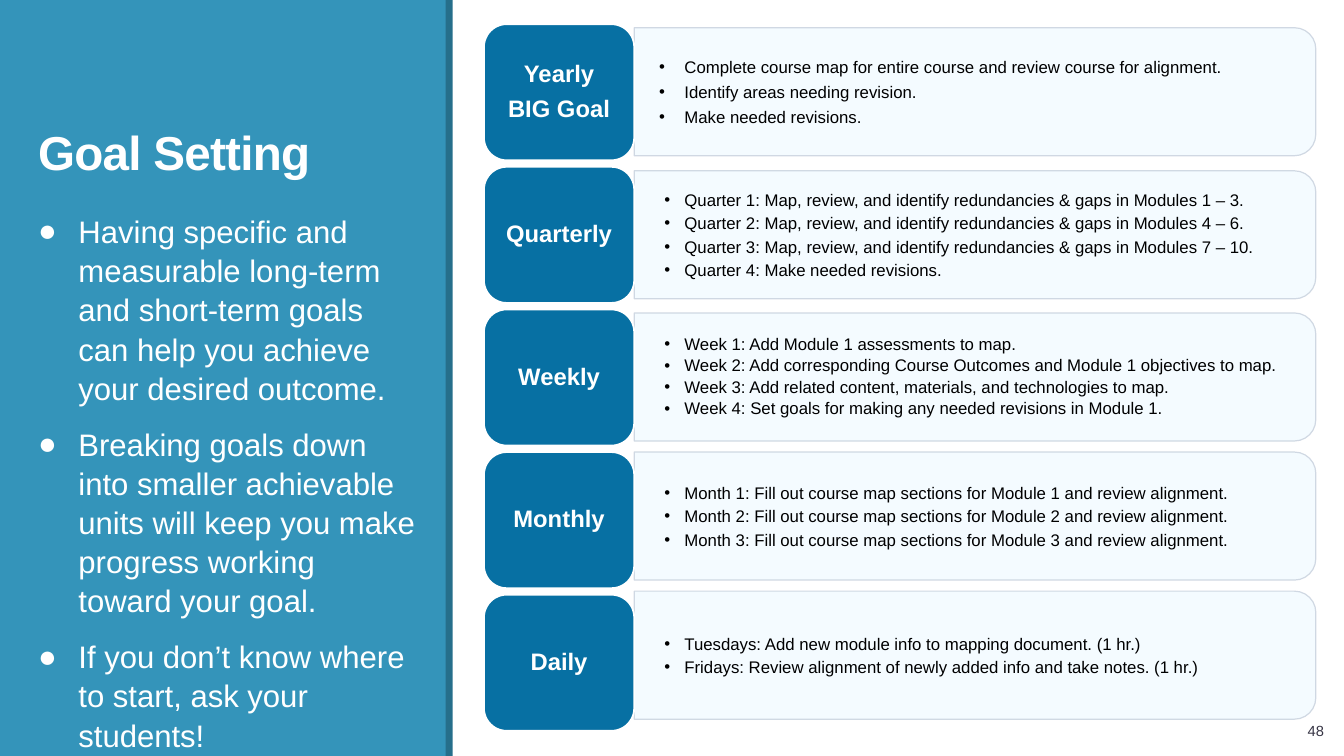
from dataclasses import dataclass

from lxml import etree
from pptx import Presentation
from pptx import util as u
from pptx.dml.color import RGBColor
from pptx.enum import shapes, text
from pptx.oxml.ns import qn

COLORS = {
    "sidebar": "3494BA", "sidebar_edge": "266F8B", "label": "0770A3",
    "panel": "F3FBFF", "panel_line": "CCD5E0", "white": "FFFFFF",
    "black": "000000", "number": "373545",
}
FONT = "Arial"
LABEL_TOP, LABEL_PITCH = 0.24, 1.415
LABEL_LEFT, LABEL_WIDTH, LABEL_HEIGHT = 4.8, 1.49, 1.35
PANEL_LEFT, PANEL_WIDTH, PANEL_HEIGHT = 6.29, 6.76, 1.27
TASKS_WIDTH, TASKS_HEIGHT = 6.7, 1.15


@dataclass
class TextStyle:
    size: float
    color: str
    bold: bool = False
    align: text.PP_ALIGN = text.PP_ALIGN.LEFT
    line_spacing: float = 1.0
    space_after: float = 0
    bullet: str = ""
    indent: float = 0
    hanging: float = 0


@dataclass
class Goal:
    label: list[str]
    tasks: list[str]
    panel_center: float
    hanging: float = 0.2
    line_spacing: float = 1.0
    space_after: float = 2.4


GOALS = [
    Goal(["Yearly", "BIG Goal"],
         ["Complete course map for entire course and review course for alignment.",
          "Identify areas needing revision.",
          "Make needed revisions."],
         0.91, hanging=0.25, space_after=3.7),
    Goal(["Quarterly"],
         ["Quarter 1: Map, review, and identify redundancies & gaps in Modules 1 – 3.",
          "Quarter 2: Map, review, and identify redundancies & gaps in Modules 4 – 6.",
          "Quarter 3: Map, review, and identify redundancies & gaps in Modules 7 – 10.",
          "Quarter 4: Make needed revisions."],
         2.33),
    Goal(["Weekly"],
         ["Week 1: Add Module 1 assessments to map.",
          "Week 2: Add corresponding Course Outcomes and Module 1 objectives to map.",
          "Week 3: Add related content, materials, and technologies to map.",
          "Week 4: Set goals for making any needed revisions in Module 1."],
         3.74, line_spacing=0.9),
    Goal(["Monthly"],
         [f"Month {n}: Fill out course map sections for Module {n} and review alignment."
          for n in (1, 2, 3)],
         5.12),
    Goal(["Daily"],
         ["Tuesdays: Add new module info to mapping document. (1 hr.)",
          "Fridays: Review alignment of newly added info and take notes. (1 hr.)"],
         6.5),
]
ADVICE = [
    "Having specific and measurable long-term and short-term goals can help you "
    "achieve your desired outcome.",
    "Breaking goals down into smaller achievable units will keep you make progress "
    "working toward your goal.",
    "If you don’t know where to start, ask your students!",
]


def rgb(name: str) -> RGBColor:
    return RGBColor.from_string(COLORS[name])


def write(frame, lines: list[str], style: TextStyle, anchor: text.MSO_ANCHOR) -> None:
    frame.word_wrap = True
    frame.vertical_anchor = anchor
    for index, line in enumerate(lines):
        paragraph = frame.paragraphs[0] if index == 0 else frame.add_paragraph()
        paragraph.text = line
        paragraph.alignment = style.align
        paragraph.line_spacing = style.line_spacing
        paragraph.space_after = u.Pt(style.space_after)
        if style.bullet:
            props = paragraph._p.get_or_add_pPr()
            props.set("marL", str(u.Inches(style.indent)))
            props.set("indent", str(-u.Inches(style.hanging)))
            etree.SubElement(props, qn("a:buFont")).set("typeface", FONT)
            etree.SubElement(props, qn("a:buChar")).set("char", style.bullet)
        font = paragraph.font
        font.name, font.size, font.bold = FONT, u.Pt(style.size), style.bold
        font.color.rgb = rgb(style.color)


def add_text(slide, left: float, top: float, width: float, height: float,
             lines: list[str], style: TextStyle, anchor=text.MSO_ANCHOR.MIDDLE):
    box = slide.shapes.add_textbox(*map(u.Inches, (left, top, width, height)))
    write(box.text_frame, lines, style, anchor)
    return box


def add_block(slide, kind, left: float, top: float, width: float, height: float,
              fill: str, line: str = "", line_width: float = 1):
    block = slide.shapes.add_shape(kind, *map(u.Inches, (left, top, width, height)))
    block.shadow.inherit = False
    block.fill.solid()
    block.fill.fore_color.rgb = rgb(fill)
    if line:
        block.line.color.rgb = rgb(line)
        block.line.width = u.Pt(line_width)
    else:
        block.line.fill.background()
    return block


def add_goal(slide, goal: Goal, label_top: float) -> None:
    # Panel: a top-rounded rectangle turned so its round corners face right
    panel = add_block(slide, shapes.MSO_SHAPE.ROUND_2_SAME_RECTANGLE,
                      PANEL_LEFT + (PANEL_WIDTH - PANEL_HEIGHT) / 2,
                      goal.panel_center - PANEL_WIDTH / 2,
                      PANEL_HEIGHT, PANEL_WIDTH, "panel", "panel_line", 0.85)
    panel.rotation = 90
    for color in panel._element.spPr.iter(qn("a:srgbClr")):
        etree.SubElement(color, qn("a:alpha")).set("val", "90000")

    # Tasks
    task_style = TextStyle(12, "black", line_spacing=goal.line_spacing,
                           space_after=goal.space_after, bullet="•",
                           indent=0.4, hanging=goal.hanging)
    add_text(slide, PANEL_LEFT, goal.panel_center - TASKS_HEIGHT / 2,
             TASKS_WIDTH, TASKS_HEIGHT, goal.tasks, task_style)

    # Label
    label = add_block(slide, shapes.MSO_SHAPE.ROUNDED_RECTANGLE, LABEL_LEFT, label_top,
                      LABEL_WIDTH, LABEL_HEIGHT, "label", "white", 1.25)
    label.text_frame.margin_left = label.text_frame.margin_right = u.Inches(0.07)
    label_style = TextStyle(17, "white", bold=True, align=text.PP_ALIGN.CENTER,
                            line_spacing=0.9,
                            space_after=6.3 if len(goal.label) > 1 else 3)
    write(label.text_frame, goal.label, label_style, text.MSO_ANCHOR.MIDDLE)


def main() -> None:
    deck = Presentation()
    deck.slide_width, deck.slide_height = u.Inches(13.33), u.Inches(7.5)
    slide = deck.slides.add_slide(deck.slide_layouts[6])

    # Sidebar
    rectangle = shapes.MSO_SHAPE.RECTANGLE
    add_block(slide, rectangle, 0, 0, 4.43, 7.5, "sidebar")
    add_block(slide, rectangle, 4.42, 0, 0.07, 7.5, "sidebar_edge")
    title = add_text(slide, 0.28, 1.25, 3.39, 0.59, ["Goal Setting"],
                     TextStyle(34, "white", bold=True, line_spacing=0.85),
                     text.MSO_ANCHOR.BOTTOM)
    title.text_frame.paragraphs[0].runs[0].font._element.set("spc", "-50")
    add_text(slide, 0.28, 2.04, 3.94, 5.21, ADVICE,
             TextStyle(22.2, "white", line_spacing=1.05, space_after=12,
                       bullet="●", indent=0.4, hanging=0.4),
             text.MSO_ANCHOR.TOP)

    # Goals
    for row, goal in enumerate(GOALS):
        add_goal(slide, goal, LABEL_TOP + row * LABEL_PITCH)

    # Slide number
    add_text(slide, 11.8, 7.05, 1.43, 0.4, ["48"],
             TextStyle(10.5, "number", align=text.PP_ALIGN.RIGHT))

    deck.save("out.pptx")


if __name__ == "__main__":
    main()
